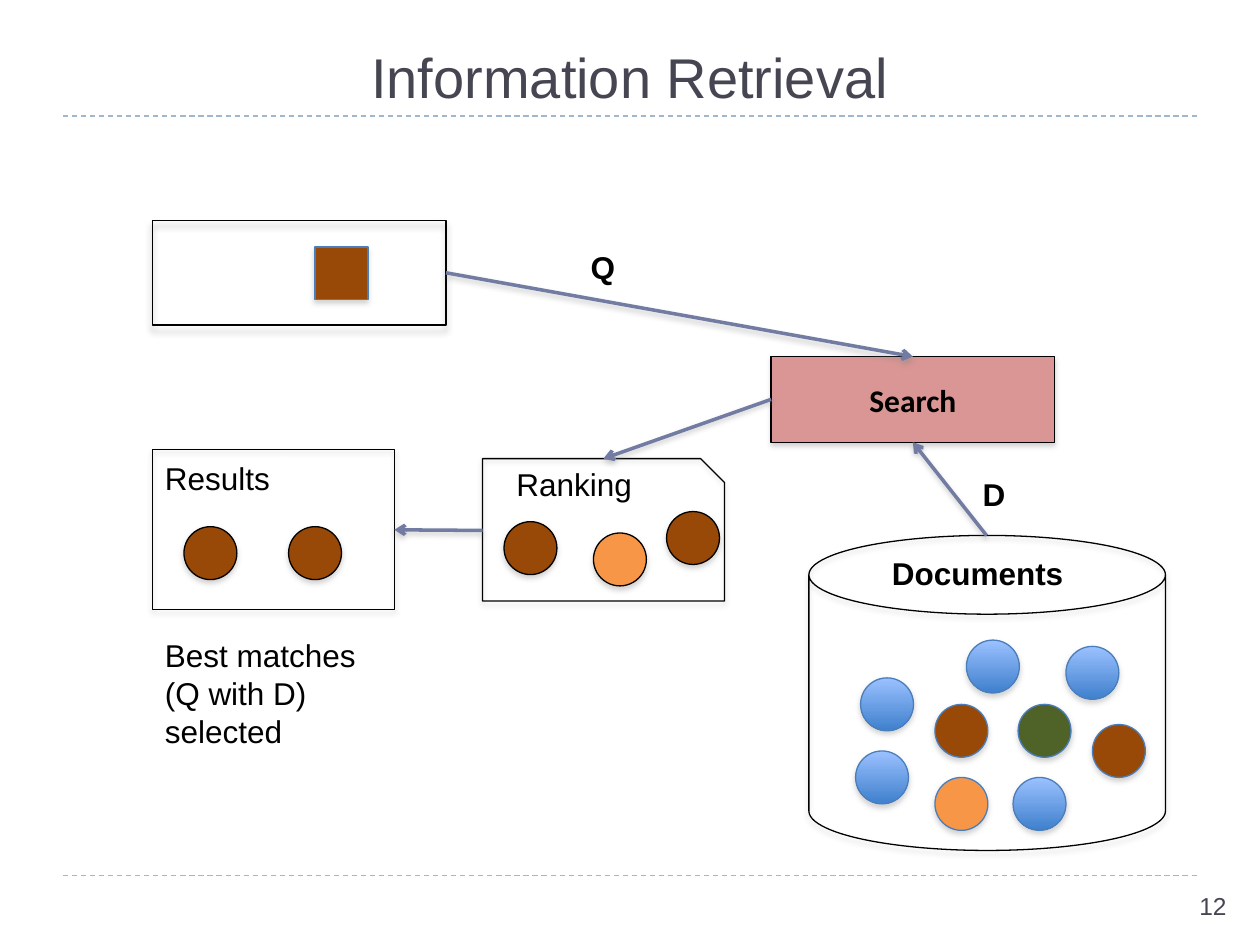
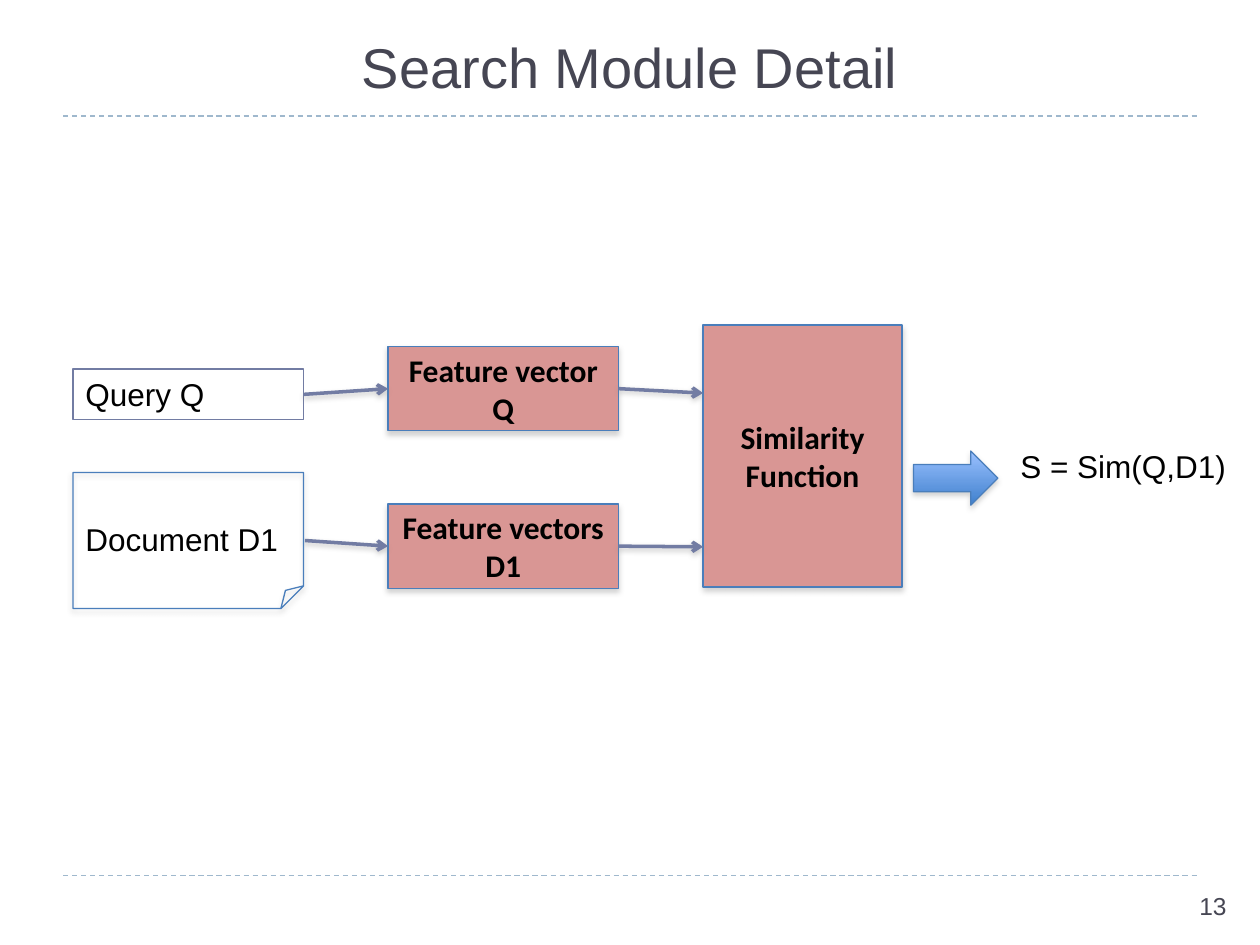
from lxml import etree
from pptx import Presentation
from pptx import util as u
from pptx.dml.color import RGBColor
from pptx.enum import dml, shapes, text
from pptx.oxml import ns

SCALE = 9144
COLORS = {
    "title": "464653", "rule": "9FB8CD", "arrow": "727CA3", "ink": "000000",
    "edge": "4A7EBB", "module": "D99694", "brown": "984807", "orange": "F79646",
    "green": "4F6228", "sky": "9BC1FF", "blue": "3F80CD", "shade": "808080",
}
KIND = shapes.MSO_SHAPE
ANCHOR = text.MSO_ANCHOR
CENTER = text.PP_ALIGN.CENTER
TOP, LEFT, BOTTOM, RIGHT = range(4)
DOT = 42
BODY = {"size": u.Pt(18), "name": "Arial", "bold": False}
STRONG = {**BODY, "bold": True}
MODULE = {**STRONG, "name": "Calibri"}
TITLE = {**BODY, "size": u.Pt(32)}
NUMBER = {**BODY, "size": u.Pt(14)}
SOFT = ("shade", 35, 3.1, 1.8)
DEEP = ("ink", 40, 4, 3.4)
LINE_SHADOW = ("shade", 38, 3.1, 1.6)


def px(*lengths):
    return [u.Emu(length * SCALE) for length in lengths]


def rgb(name):
    return RGBColor.from_string(COLORS[name])


def set_all(target, values):
    for key, value in values.items():
        setattr(target, key, value)


def child(parent, tag, **attributes):
    return etree.SubElement(parent, ns.qn(tag), attributes)


def cast_shadow(effects, color, alpha, blur, distance):
    outer = child(effects, "a:outerShdw", blurRad=str(u.Pt(blur)), dist=str(u.Pt(distance)),
                  dir="5400000", rotWithShape="0")
    tint = child(outer, "a:srgbClr", val=COLORS[color])
    child(tint, "a:alpha", val=str(alpha * 1000))


def style(shape, fill, edge, shadow):
    if fill is None:
        shape.fill.background()
    elif fill == "gradient":
        shape.fill.gradient()
        shape.fill.gradient_angle = 270
        for stop, (position, name) in zip(shape.fill.gradient_stops, [(0, "sky"), (1, "blue")]):
            stop.position = position
            stop.color.rgb = rgb(name)
    else:
        shape.fill.solid()
        shape.fill.fore_color.rgb = rgb(fill)
    shape.line.color.rgb = rgb(edge)
    shape.line.width = u.Pt(0.75)
    shape.shadow.inherit = False
    if shadow:
        cast_shadow(shape._element.spPr.find(ns.qn("a:effectLst")), *shadow)
    return shape


def draw(page, kind, at, fill=None, edge="ink", shadow=SOFT):
    return style(page.shapes.add_shape(kind, *px(*at)), fill, edge, shadow)


def write(box, lines, font=BODY, color="ink", align=text.PP_ALIGN.LEFT, **frame_format):
    frame = box.text_frame
    set_all(frame, {"word_wrap": True, "vertical_anchor": ANCHOR.TOP, **frame_format})
    for index, line in enumerate(lines.split("\n")):
        para = frame.add_paragraph() if index else frame.paragraphs[0]
        para.alignment = align
        span = para.add_run()
        span.text = line
        set_all(span.font, font)
        span.font.color.rgb = rgb(color)


def label(page, at, words, font=BODY, wrap=False):
    write(page.shapes.add_textbox(*px(*at)), words, font, word_wrap=wrap,
          auto_size=text.MSO_AUTO_SIZE.SHAPE_TO_FIT_TEXT)


def module(page, at, words, edge="edge"):
    box = draw(page, KIND.RECTANGLE, at, "module", edge)
    write(box, words, MODULE, align=CENTER, vertical_anchor=ANCHOR.MIDDLE)
    return box


def dots(page, places, fill, edge="ink"):
    for left, top in places:
        draw(page, KIND.OVAL, (left, top, DOT, DOT), fill, edge)


def connect(page, start, end):
    points = [(0, 0) if hasattr(place[0], "left") else px(*place) for place in (start, end)]
    line = page.shapes.add_connector(shapes.MSO_CONNECTOR.STRAIGHT, *points[0], *points[1])
    for place, join in ((start, line.begin_connect), (end, line.end_connect)):
        if hasattr(place[0], "left"):
            join(*place)
    return line


def finish_line(line, color, width):
    line.line.color.rgb = rgb(color)
    line.line.width = u.Pt(width)
    return child(line._element.spPr, "a:effectLst")


def arrow(page, start, end):
    line = connect(page, start, end)
    cast_shadow(finish_line(line, "arrow", 2), *LINE_SHADOW)
    child(line._element.spPr.find(ns.qn("a:ln")), "a:tailEnd", type="arrow")


def rule(page, top):
    line = connect(page, (50, top), (950, top))
    finish_line(line, "rule", 0.75)
    line.line.dash_style = dml.MSO_LINE.DASH


def add_page(deck, title, title_top, number):
    page = deck.slides.add_slide(deck.slide_layouts[6])
    for top in (695, 92):
        rule(page, top)
    write(page.shapes.add_textbox(*px(50, title_top, 900, 67)), title, TITLE, "title",
          CENTER, vertical_anchor=ANCHOR.BOTTOM)
    write(page.shapes.add_textbox(*px(942, 702, 50, 40)), str(number), NUMBER, "title")
    return page


def ranking_card(page):
    card = page.shapes.add_group_shape()
    outline = card.shapes.build_freeform(383, 364, scale=SCALE)
    outline.add_line_segments([(556, 364), (575, 383), (575, 477), (383, 477)])
    style(outline.convert_to_shape(), None, "ink", SOFT)
    dots(card, [(529, 406), (400, 414)], "brown")
    dots(card, [(471, 423)], "orange")
    label(card, (400, 364, 113, 40), "Ranking")


def results_card(page):
    card = page.shapes.add_group_shape()
    dots(card, [(229, 418), (146, 418)], "brown")
    box = draw(card, KIND.RECTANGLE, (121, 357, 192, 127))
    label(card, (121, 359, 104, 40), "Results")
    return box


def query_card(page):
    card = page.shapes.add_group_shape()
    box = draw(card, KIND.RECTANGLE, (121, 175, 233, 83), shadow=DEEP)
    draw(card, KIND.RECTANGLE, (250, 196, DOT, DOT), "brown", "edge")
    return box


def document_store(page):
    dots(page, [(808, 559)], "green", "edge")
    dots(page, [(867, 575), (742, 559)], "brown", "edge")
    dots(page, [(742, 617)], "orange", "edge")
    dots(page, [(804, 617), (683, 538), (679, 596), (846, 513), (767, 508)], "gradient", "edge")
    label(page, (698, 435, 158, 40), "Documents", STRONG)
    draw(page, KIND.CAN, (642, 425, 283, 250))


def retrieval_page(deck):
    page = add_page(deck, "Information Retrieval", 25, 12)
    document_store(page)
    search = module(page, (612, 283, 225, 68), "Search", "ink")
    ranking_card(page)
    query = query_card(page)
    results = results_card(page)
    arrow(page, (query, RIGHT), (search, TOP))
    arrow(page, (783, 425), (search, BOTTOM))
    arrow(page, (search, LEFT), (479, 364))
    arrow(page, (383, 421), (results, RIGHT))
    label(page, (459, 192, 40, 40), "Q", STRONG)
    label(page, (770, 372, 38, 40), "D", STRONG)
    label(page, (121, 500, 192, 101), "Best matches (Q with D) selected", wrap=True)


def search_detail_page(deck):
    page = add_page(deck, "Search Module Detail", 17, 13)
    query = draw(page, KIND.RECTANGLE, (58, 293, 183, 40), None, "arrow", None)
    write(query, "Query Q")
    label(page, (58, 408, 183, 40), "Document D1", wrap=True)
    query_vector = module(page, (308, 275, 183, 67), "Feature vector Q")
    module(page, (558, 258, 158, 208), "Similarity Function")
    document_vector = module(page, (308, 400, 183, 67), "Feature vectors\nD1")
    label(page, (800, 350, 185, 40), "S = Sim(Q,D1)")
    arrow(page, (query, RIGHT), (query_vector, LEFT))
    arrow(page, (242, 429), (document_vector, LEFT))
    arrow(page, (query_vector, RIGHT), (558, 312))
    arrow(page, (document_vector, RIGHT), (558, 434))
    draw(page, KIND.RIGHT_ARROW, (725, 358, 67, 43), "gradient", "edge")
    draw(page, KIND.FOLDED_CORNER, (58, 375, 183, 108), None, "edge")


def main():
    deck = Presentation()
    deck.slide_width, deck.slide_height = px(1000, 750)
    retrieval_page(deck)
    search_detail_page(deck)
    deck.save("out.pptx")


if __name__ == "__main__":
    main()
